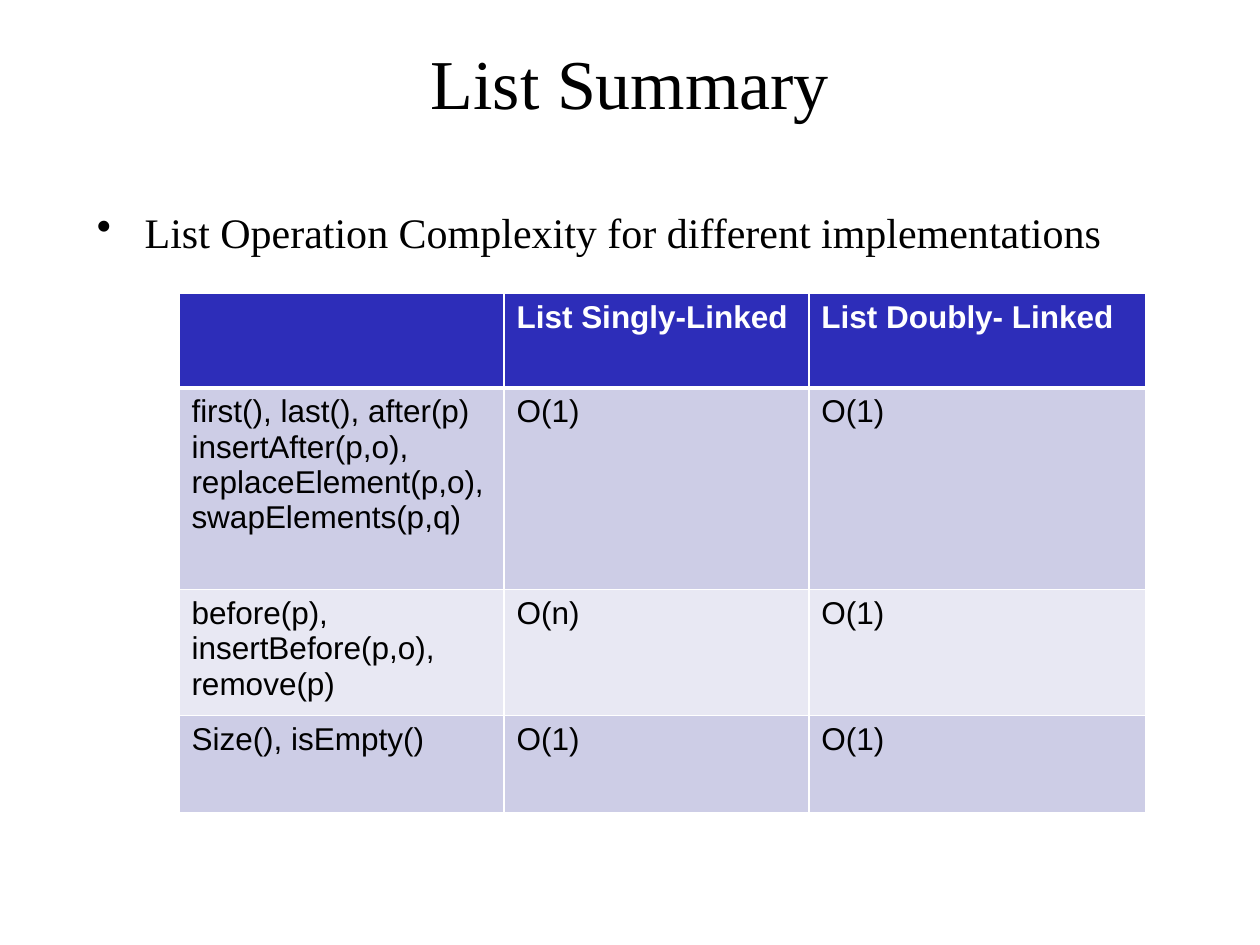
from lxml import etree
from pptx import Presentation
from pptx.dml.color import RGBColor as RGB
from pptx.enum.text import MSO_ANCHOR as Anchor, PP_ALIGN as Align
from pptx.oxml.ns import qn
from pptx.util import Inches, Pt

TITLE = "List Summary"
BULLET = "List Operation Complexity for different implementations"
ROWS = [
    ["", "List Singly-Linked", "List Doubly- Linked"],
    ["first(), last(), after(p)\ninsertAfter(p,o), replaceElement(p,o), swapElements(p,q)",
     "O(1)", "O(1)"],
    ["before(p), insertBefore(p,o), remove(p)", "O(n)", "O(1)"],
    ["Size(), isEmpty()", "O(1)", "O(1)"],
]
COLUMN_WIDTHS = [2.58, 2.42, 2.67]
ROW_HEIGHTS = [0.75, 1.6, 1, 0.77]
THEME = {
    "serif": "Times New Roman", "sans": "Arial",
    "title": 40, "body": 24, "cell": 18,
    "text": "000000", "light": "FFFFFF", "header": "2D2DB9",
    "bands": ["E8E8F3", "CDCDE6"],
}


def add_text(para, text, font, size, color, bold=False):
    span = para.add_run()
    span.text = text
    span.font.name = font
    span.font.size = Pt(size)
    span.font.bold = bold
    span.font.color.rgb = RGB.from_string(color)


def add_borders(cell, widths):
    properties = cell._tc.get_or_add_tcPr()
    for index, (side, width) in enumerate(widths.items()):
        line = etree.Element(qn(f"a:ln{side}"), w=str(Pt(width)))
        fill = etree.SubElement(line, qn("a:solidFill"))
        etree.SubElement(fill, qn("a:srgbClr"), val=THEME["light"])
        properties.insert(index, line)


def add_title(page):
    title = page.shapes.title
    title.left, title.top, title.width, title.height = map(Inches, (0.5, 0.3, 9, 0.7))
    title.text_frame.vertical_anchor = Anchor.MIDDLE
    para = title.text_frame.paragraphs[0]
    para.alignment = Align.CENTER
    add_text(para, TITLE, THEME["serif"], THEME["title"], THEME["text"])


def add_bullet(page):
    box = page.shapes.add_textbox(*map(Inches, (0.67, 1.59, 9, 4.75)))
    box.text_frame.word_wrap = True
    para = box.text_frame.paragraphs[0]
    para.space_before = Pt(0.2 * THEME["body"])
    properties = para._p.get_or_add_pPr()
    properties.set("marL", str(Inches(0.38)))
    properties.set("indent", str(Inches(-0.38)))
    etree.SubElement(properties, qn("a:buChar"), char="•")
    add_text(para, BULLET, THEME["serif"], THEME["body"], THEME["text"])


def add_complexity_table(page):
    frame = page.shapes.add_table(
        len(ROWS), len(COLUMN_WIDTHS), Inches(1.42), Inches(2.33),
        Inches(sum(COLUMN_WIDTHS)), Inches(sum(ROW_HEIGHTS)))
    table = frame.table
    for column, width in zip(table.columns, COLUMN_WIDTHS):
        column.width = Inches(width)
    for r, (texts, height) in enumerate(zip(ROWS, ROW_HEIGHTS)):
        table.rows[r].height = Inches(height)
        is_header = r == 0
        for c, text in enumerate(texts):
            cell = table.cell(r, c)
            cell.fill.solid()
            cell.fill.fore_color.rgb = RGB.from_string(
                THEME["header"] if is_header else THEME["bands"][r % 2])
            add_borders(cell, {"L": 1, "R": 1, "T": 3 if r == 1 else 1,
                               "B": 3 if is_header else 1})
            for i, line in enumerate(text.split("\n") if text else []):
                para = cell.text_frame.add_paragraph() if i else cell.text_frame.paragraphs[0]
                add_text(para, line, THEME["sans"], THEME["cell"],
                         THEME["light" if is_header else "text"], is_header)


def main():
    deck = Presentation()
    deck.slide_width, deck.slide_height = Inches(10), Inches(7.5)
    page = deck.slides.add_slide(deck.slide_layouts.get_by_name("Title Only"))
    add_title(page)
    add_bullet(page)
    add_complexity_table(page)
    deck.save("out.pptx")


if __name__ == "__main__":
    main()
